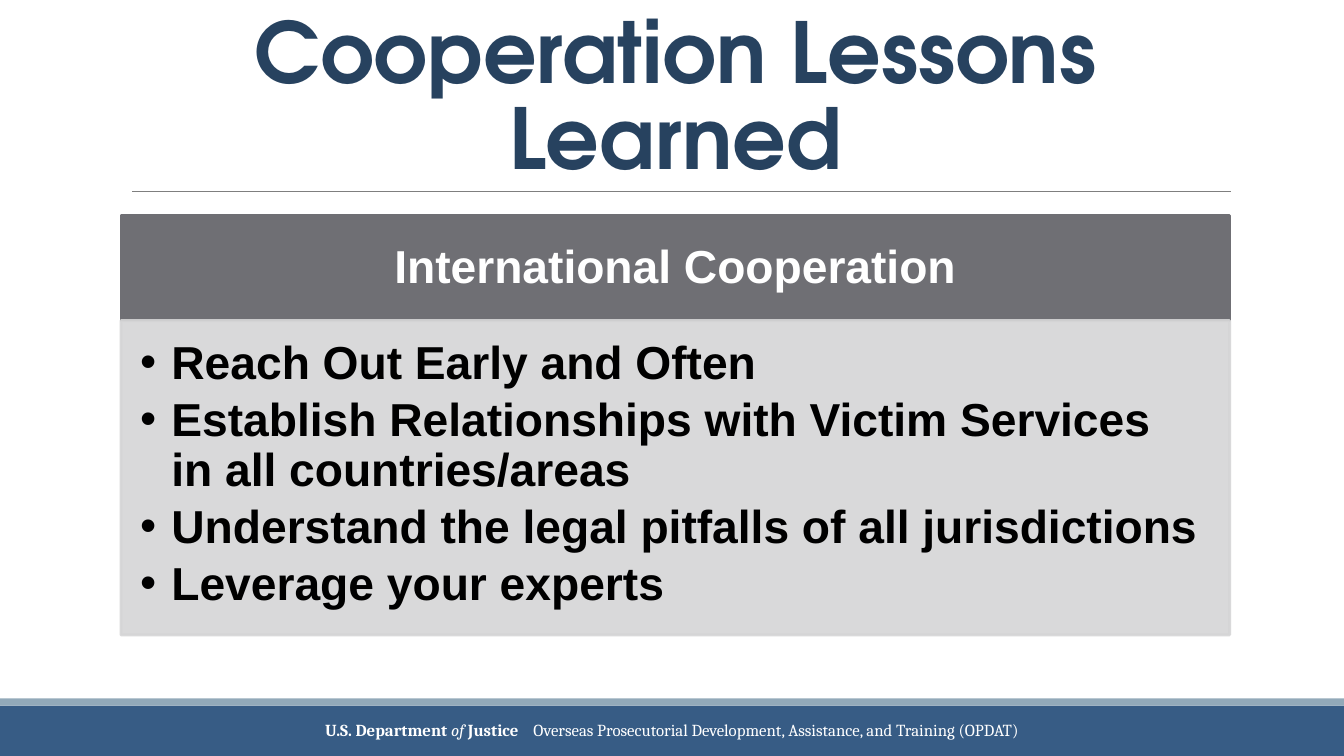
"""Build the slide on lessons learned from international cooperation."""
from dataclasses import dataclass
from typing import Optional

import lxml.etree
import pptx
import pptx.dml.color
import pptx.enum.shapes
import pptx.enum.text
import pptx.oxml
import pptx.oxml.ns
import pptx.util

Cm = pptx.util.Cm
Pt = pptx.util.Pt
Align = pptx.enum.text.PP_ALIGN
Anchor = pptx.enum.text.MSO_ANCHOR

COLORS = {
    "title": "27425F",
    "rule": "7F7F7F",
    "band": "375C85",
    "strip": "92A9B9",
    "heading": "6F6F74",
    "body": "D5D5D6",
    "white": "FFFFFF",
    "black": "000000",
}
SLIDE_WIDTH, SLIDE_HEIGHT = 33.87, 19.05
PANEL_LEFT, PANEL_WIDTH = 3.05, 27.94
HEADING_TOP, HEADING_HEIGHT = 5.44, 2.64
BAND_TOP, STRIP_HEIGHT = 17.78, 0.18
BULLET_INDENT = 0.79

LESSONS = [
    "Reach Out Early and Often",
    "Establish Relationships with Victim Services in all countries/areas",
    "Understand the legal pitfalls of all jurisdictions",
    "Leverage your experts",
]


@dataclass(frozen=True)
class Box:
    """Position and size in centimetres."""
    left: float
    top: float
    width: float
    height: float

    def lengths(self) -> list:
        """Return the four lengths in slide units."""
        return [Cm(v) for v in (self.left, self.top, self.width, self.height)]


@dataclass(frozen=True)
class Block:
    """A filled rectangle."""
    box: Box
    color: str
    line_width: float = 0
    opacity: int = 100


@dataclass(frozen=True)
class Piece:
    """A stretch of text with its own style."""
    text: str
    bold: bool = True
    italic: bool = False
    spacing: Optional[int] = None


BAND = Block(Box(0, BAND_TOP, SLIDE_WIDTH, SLIDE_HEIGHT - BAND_TOP), "band")
STRIP = Block(Box(0, BAND_TOP - STRIP_HEIGHT, SLIDE_WIDTH, STRIP_HEIGHT), "strip")
HEADING = Block(Box(PANEL_LEFT, HEADING_TOP, PANEL_WIDTH, HEADING_HEIGHT), "heading", 2)
BODY = Block(
    Box(PANEL_LEFT, HEADING_TOP + HEADING_HEIGHT, PANEL_WIDTH, 7.92), "body", 2, 90)
TITLE = Box(PANEL_LEFT, 0.79, PANEL_WIDTH, 4.04)
AGENCY = Box(6.68, 18.03, 20.52, 0.81)
AGENCY_LINE = [
    Piece("U.S. Department "),
    Piece("of", bold=False, italic=True),
    Piece(" Justice"),
    Piece(" ", spacing=800),
    Piece("Overseas Prosecutorial Development, Assistance, and Training (OPDAT)", bold=False),
]


def rgb(name: str) -> pptx.dml.color.RGBColor:
    """Look up a named colour."""
    return pptx.dml.color.RGBColor.from_string(COLORS[name])


def draw_block(slide, block: Block):
    """Draw a rectangle and return it."""
    rectangle = slide.shapes.add_shape(
        pptx.enum.shapes.MSO_SHAPE.RECTANGLE, *block.box.lengths())
    rectangle.shadow.inherit = False
    rectangle.fill.solid()
    rectangle.fill.fore_color.rgb = rgb(block.color)
    if block.line_width:
        rectangle.line.width = Pt(block.line_width)
        rectangle.line.color.rgb = rgb(block.color)
    else:
        rectangle.line.fill.background()
    if block.opacity < 100:
        for color in rectangle.element.spPr.iter(pptx.oxml.ns.qn("a:srgbClr")):
            alpha = lxml.etree.SubElement(color, pptx.oxml.ns.qn("a:alpha"))
            alpha.set("val", str(block.opacity * 1000))
    return rectangle


def draw_rule(slide, left: float, right: float, top: float) -> None:
    """Draw the thin line under the title."""
    rule = slide.shapes.add_connector(
        pptx.enum.shapes.MSO_CONNECTOR.STRAIGHT, Cm(left), Cm(top), Cm(right), Cm(top))
    rule.line.width = Pt(0.75)
    rule.line.color.rgb = rgb("rule")
    lxml.etree.SubElement(rule.element.spPr, pptx.oxml.ns.qn("a:effectLst"))


def add_bullet(paragraph) -> None:
    """Give a paragraph a round bullet and a hanging indent."""
    properties = paragraph._p.get_or_add_pPr()
    properties.set("marL", str(Cm(BULLET_INDENT)))
    properties.set("indent", str(-Cm(BULLET_INDENT)))
    font = lxml.etree.SubElement(properties, pptx.oxml.ns.qn("a:buFont"))
    font.set("typeface", "Arial")
    bullet = lxml.etree.SubElement(properties, pptx.oxml.ns.qn("a:buChar"))
    bullet.set("char", "•")


def write_text(shape, paragraphs: list[list[Piece]], *, font: str, size: float, color: str,
               insets: tuple[float, float, float, float], line_spacing: float = 0.9,
               align=Align.CENTER, anchor=Anchor.MIDDLE, space_after: float = 0,
               bulleted: bool = False) -> None:
    """Fill a shape with formatted paragraphs."""
    frame = shape.text_frame
    frame.word_wrap = True
    frame.vertical_anchor = anchor
    (frame.margin_left, frame.margin_top,
     frame.margin_right, frame.margin_bottom) = [Cm(inset) for inset in insets]
    for number, pieces in enumerate(paragraphs):
        paragraph = frame.add_paragraph() if number else frame.paragraphs[0]
        paragraph.alignment = align
        paragraph.line_spacing = line_spacing
        paragraph.space_after = Pt(space_after)
        if bulleted:
            add_bullet(paragraph)
        for piece in pieces:
            run = paragraph.add_run()
            run.text = piece.text
            run.font.name = font
            run.font.size = Pt(size)
            run.font.bold = piece.bold
            run.font.italic = piece.italic
            run.font.color.rgb = rgb(color)
            if piece.spacing is not None:
                run._r.get_or_add_rPr().set("spc", str(piece.spacing))


def main() -> None:
    """Build and save the presentation."""
    deck = pptx.Presentation()
    deck.slide_width, deck.slide_height = Cm(SLIDE_WIDTH), Cm(SLIDE_HEIGHT)
    slide = deck.slides.add_slide(deck.slide_layouts[6])

    draw_block(slide, BAND)
    draw_block(slide, STRIP)
    draw_rule(slide, 3.33, 31.01, 4.83)
    write_text(slide.shapes.add_textbox(*AGENCY.lengths()), [AGENCY_LINE],
               font="Cambria", size=12, color="white",
               insets=(0.18, 0.1, 0.18, 0.1), line_spacing=0.8)
    write_text(slide.shapes.add_textbox(*TITLE.lengths()),
               [[Piece("Cooperation Lessons Learned")]],
               font="TeX Gyre Adventor", size=60, color="title",
               insets=(0.25, 0.13, 0.25, 0.13), line_spacing=0.85, anchor=Anchor.BOTTOM)
    write_text(draw_block(slide, HEADING), [[Piece("International Cooperation")]],
               font="Arial", size=33, color="white", insets=(0.66, 0.38, 0.66, 0.38))
    write_text(draw_block(slide, BODY), [[Piece(lesson)] for lesson in LESSONS],
               font="Arial", size=33, color="black", insets=(0.48, 0.48, 0.66, 0.74),
               align=Align.LEFT, anchor=Anchor.TOP, space_after=5, bulleted=True)
    deck.save("out.pptx")


if __name__ == "__main__":
    main()
